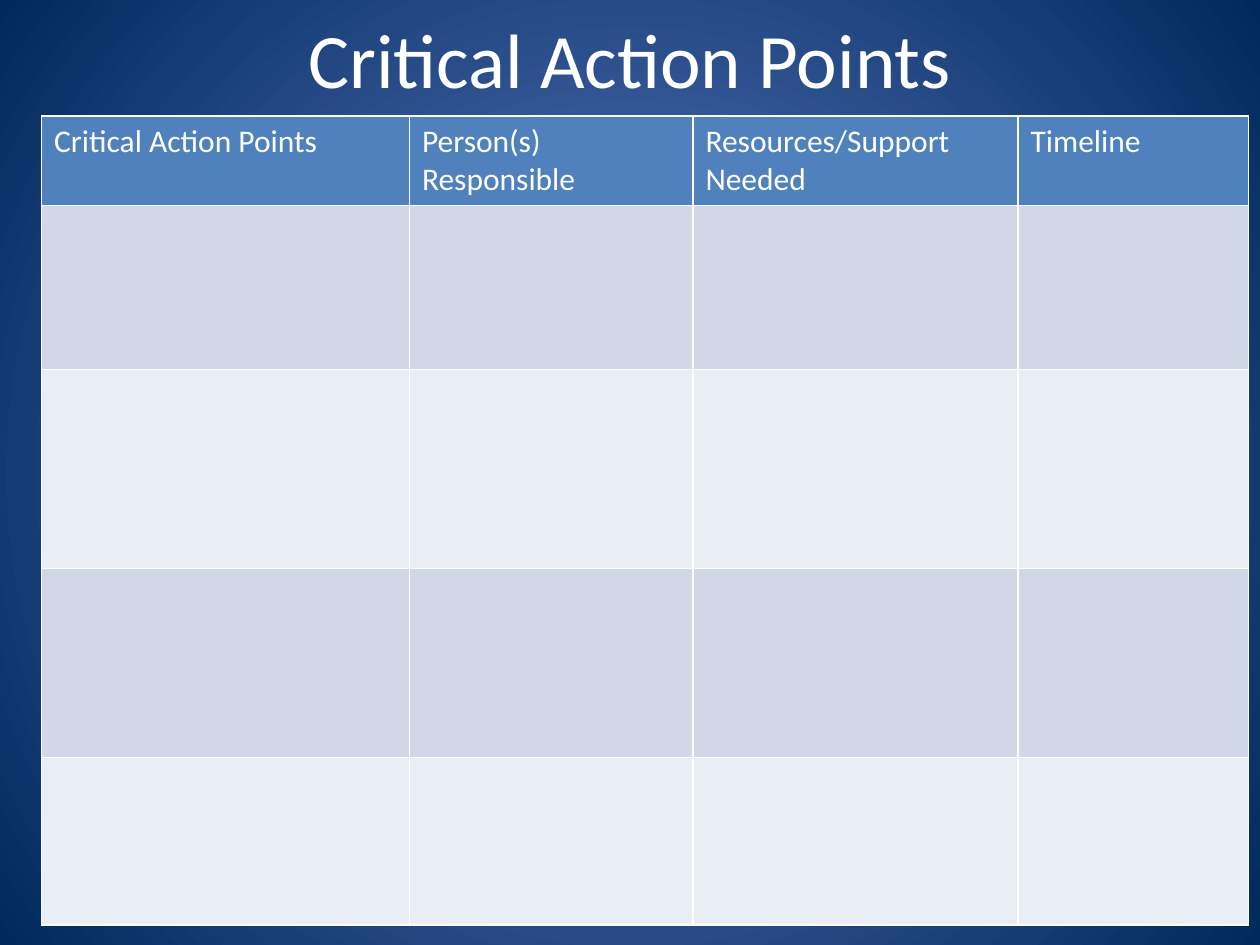
from lxml.etree import SubElement
from pptx import Presentation
from pptx.dml.color import RGBColor
from pptx.enum.text import MSO_ANCHOR, PP_ALIGN
from pptx.oxml import parse_xml
from pptx.oxml.ns import nsdecls, qn
from pptx.util import Inches, Pt

COLORS = {
    "text": "FFFFFF",
    "border": "FFFFFF",
    "header": "4F81BD",
    "dark_band": "D0D8E8",
    "light_band": "E9EDF4",
    "glow": "5E7CC5",
    "edge": "00295C",
}
FONT = "Calibri"
HEADINGS = ["Critical Action Points", "Person(s) Responsible",
            "Resources/Support Needed", "Timeline"]
COLUMN_WIDTHS = [2.92, 2.25, 2.58, 1.83]
ROW_HEIGHTS = [0.58, 1.3, 1.58, 1.5, 1.33]


def color(name):
    return RGBColor.from_string(COLORS[name])


def format_text(text_frame, size):
    for para in text_frame.paragraphs:
        for span in para.runs:
            span.font.name = FONT
            span.font.size = Pt(size)
            span.font.bold = False
            span.font.color.rgb = color("text")


def paint_background(page):
    """Fill the page with a circular gradient that is lightest in the middle."""
    fill = page.background.fill
    fill.gradient()
    for stop, name in zip(fill.gradient_stops, ("glow", "edge")):
        stop.color.rgb = color(name)
    gradient = page.background._cSld.find(".//" + qn("a:gradFill"))
    linear = gradient.find(qn("a:lin"))
    circle = parse_xml(
        f'<a:path {nsdecls("a")} path="circle">'
        '<a:fillToRect l="50000" t="50000" r="50000" b="50000"/></a:path>')
    gradient.replace(linear, circle)


def add_title(page, text):
    title = page.shapes.title
    title.left, title.top = Inches(0.5), Inches(0)
    title.width, title.height = Inches(9), Inches(0.92)
    frame = title.text_frame
    frame.text = text
    frame.vertical_anchor = MSO_ANCHOR.MIDDLE
    frame.paragraphs[0].alignment = PP_ALIGN.CENTER
    format_text(frame, 44)


def add_borders(cell, points=1):
    properties = cell._tc.get_or_add_tcPr()
    for index, side in enumerate(("lnL", "lnR", "lnT", "lnB")):
        line = SubElement(properties, qn(f"a:{side}"), w=str(Pt(points)))
        fill = SubElement(line, qn("a:solidFill"))
        SubElement(fill, qn("a:srgbClr"), val=COLORS["border"])
        properties.insert(index, line)


def add_action_table(page):
    table = page.shapes.add_table(
        len(ROW_HEIGHTS), len(COLUMN_WIDTHS), Inches(0.33), Inches(0.92),
        Inches(sum(COLUMN_WIDTHS)), Inches(sum(ROW_HEIGHTS))).table
    for column, width in zip(table.columns, COLUMN_WIDTHS):
        column.width = Inches(width)
    for index, (row, height) in enumerate(zip(table.rows, ROW_HEIGHTS)):
        row.height = Inches(height)
        band = "dark_band" if index % 2 else "light_band"
        for cell in row.cells:
            cell.fill.solid()
            cell.fill.fore_color.rgb = color(band if index else "header")
            add_borders(cell)
    for cell, heading in zip(table.rows[0].cells, HEADINGS):
        cell.text_frame.text = heading
        format_text(cell.text_frame, 18)


def main():
    deck = Presentation()
    deck.slide_width, deck.slide_height = Inches(10), Inches(7.5)
    page = deck.slides.add_slide(deck.slide_layouts.get_by_name("Title Only"))
    paint_background(page)
    add_title(page, "Critical Action Points")
    add_action_table(page)
    deck.save("out.pptx")


if __name__ == "__main__":
    main()
